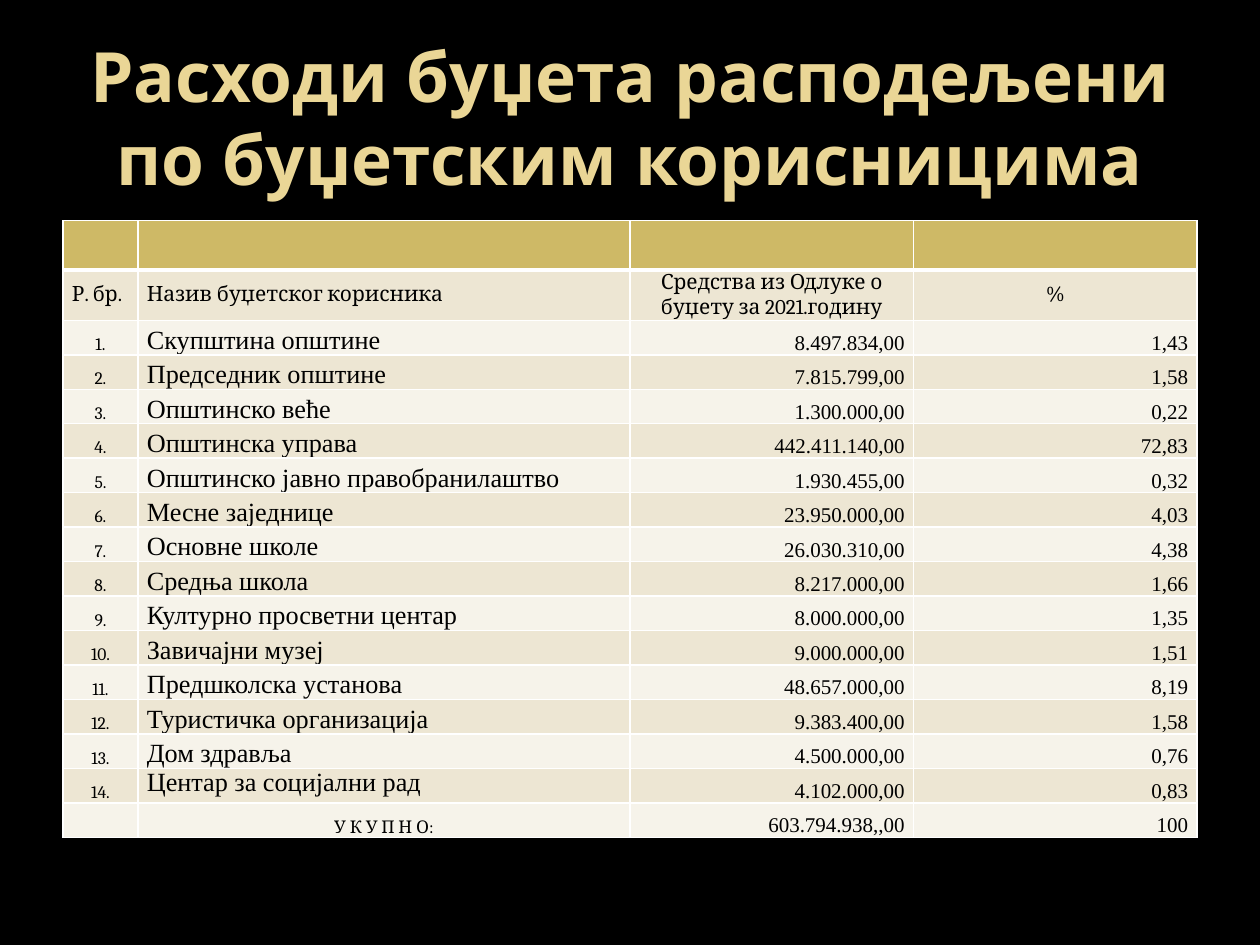
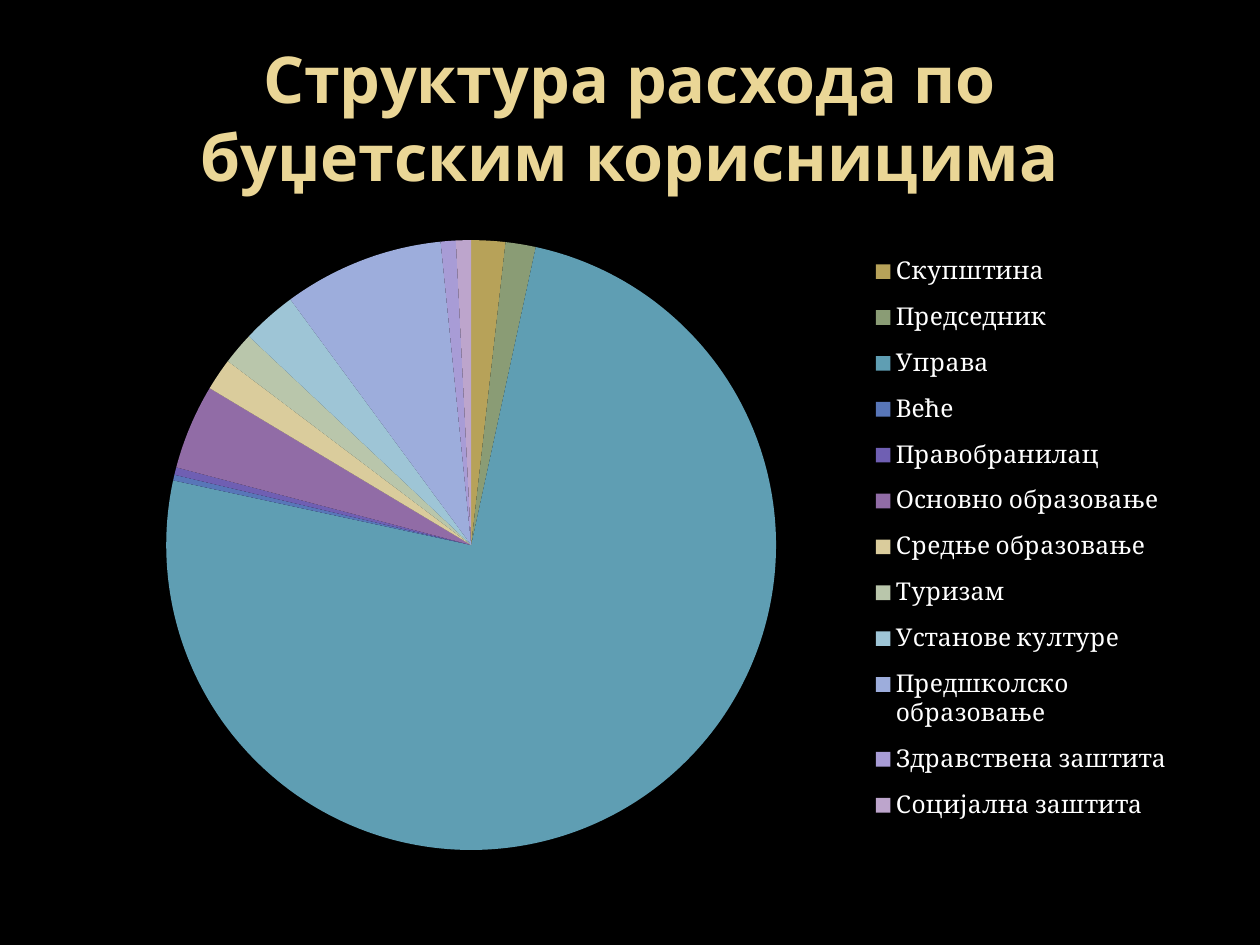
from dataclasses import dataclass

from lxml import etree
from pptx import Presentation
from pptx.chart.data import CategoryChartData
from pptx.dml.color import RGBColor
from pptx.enum.chart import XL_CHART_TYPE, XL_LEGEND_POSITION
from pptx.enum.text import MSO_ANCHOR, PP_ALIGN
from pptx.oxml import parse_xml
from pptx.oxml.ns import nsdecls, qn
from pptx.util import Cm, Pt

LEFT, CENTER, RIGHT, JUSTIFY = PP_ALIGN.LEFT, PP_ALIGN.CENTER, PP_ALIGN.RIGHT, PP_ALIGN.JUSTIFY
TOP, MIDDLE, BOTTOM = MSO_ANCHOR.TOP, MSO_ANCHOR.MIDDLE, MSO_ANCHOR.BOTTOM
PIE, LEGEND_RIGHT = XL_CHART_TYPE.PIE, XL_LEGEND_POSITION.RIGHT


@dataclass(frozen=True)
class Theme:
    background: str = "000000"
    title: str = "EAD696"
    header: str = "CEB966"
    bands: tuple[str, str] = ("EDE6D3", "F6F3EA")
    border: str = "FFFFFF"
    table_text: str = "000000"
    chart_text: str = "FFFFFF"
    title_font: str = "Open Sans"
    label_font: str = "Cambria"
    body_font: str = "Times New Roman"
    number_size: float = 10
    text_size: float = 12
    legend_size: float = 14
    name_size: float = 15
    chart_size: float = 18


@dataclass(frozen=True)
class CellStyle:
    font: str
    size: float
    align: PP_ALIGN
    anchor: MSO_ANCHOR = BOTTOM


@dataclass(frozen=True)
class Beneficiary:
    name: str
    amount: str
    share: str


@dataclass(frozen=True)
class Sector:
    name: str
    share: float
    color: str


THEME = Theme()
CONTENT_LEFT, CONTENT_TOP, CONTENT_WIDTH = Cm(1.27), Cm(4.45), Cm(22.86)
COLUMN_WIDTHS = (Cm(1.51), Cm(9.92), Cm(5.72), Cm(5.71))
TABLE_HEIGHT, HEADER_HEIGHT, HEADER_ROWS = Cm(12.41), Cm(0.99), 2

HEADING_LEFT = CellStyle(THEME.label_font, THEME.text_size, LEFT, MIDDLE)
HEADING_CENTER = CellStyle(THEME.label_font, THEME.text_size, CENTER, MIDDLE)
NUMBER = CellStyle(THEME.label_font, THEME.number_size, CENTER)
NAME = CellStyle(THEME.body_font, THEME.name_size, LEFT)
LAST_NAME = CellStyle(THEME.body_font, THEME.name_size, JUSTIFY, TOP)
FIGURE = CellStyle(THEME.body_font, THEME.text_size, RIGHT)

HEADINGS = ("Р. бр.", "Назив буџетског корисника",
            "Средства из Одлуке о буџету за 2021.годину", "%")
BENEFICIARIES = (
    Beneficiary("Скупштина општине", "8.497.834,00", "1,43"),
    Beneficiary("Председник општине", "7.815.799,00", "1,58"),
    Beneficiary("Општинско веће", "1.300.000,00", "0,22"),
    Beneficiary("Општинска управа", "442.411.140,00", "72,83"),
    Beneficiary("Општинско јавно правобранилаштво", "1.930.455,00", "0,32"),
    Beneficiary("Месне заједнице", "23.950.000,00", "4,03"),
    Beneficiary("Основне школе", "26.030.310,00", "4,38"),
    Beneficiary("Средњa школa", "8.217.000,00", "1,66"),
    Beneficiary("Културно просветни центар", "8.000.000,00", "1,35"),
    Beneficiary("Завичајни музеј", "9.000.000,00", "1,51"),
    Beneficiary("Предшколска установа", "48.657.000,00", "8,19"),
    Beneficiary("Туристичка организација", "9.383.400,00", "1,58"),
    Beneficiary("Дом здравља", "4.500.000,00", "0,76"),
    Beneficiary("Центар за социјални рад", "4.102.000,00", "0,83"),
)
TOTAL = ("", "У К У П Н О:", "603.794.938,,00", "100")

SECTORS = (
    Sector("Скупштина", 1.8, "B7A259"),
    Sector("Председник", 1.6, "8A9C75"),
    Sector("Управа", 75, "5F9EB3"),
    Sector("Веће", 0.3, "5876B8"),
    Sector("Правобранилац", 0.4, "6F5FB3"),
    Sector("Основно образовање", 4.5, "916CA6"),
    Sector("Средње образовање", 1.7, "DACC9C"),
    Sector("Туризам", 1.7, "B9C6AB"),
    Sector("Установе културе", 2.9, "9EC5D6"),
    Sector("Предшколско образовање", 8.5, "9DADDC"),
    Sector("Здравствена заштита", 0.8, "A89CD6"),
    Sector("Социјална заштита", 0.8, "BDA5CC"),
)


def style_font(font, name: str, size: float, color: str, bold: bool = False) -> None:
    font.name, font.size, font.bold = name, Pt(size), bold
    font.color.rgb = RGBColor.from_string(color)


def add_page(deck, title: str, title_size: float):
    """Add a dark page with its centred title."""
    page = deck.slides.add_slide(deck.slide_layouts[6])
    page.background.fill.solid()
    page.background.fill.fore_color.rgb = RGBColor.from_string(THEME.background)
    box = page.shapes.add_textbox(CONTENT_LEFT, Cm(0.76), CONTENT_WIDTH, Cm(3.18))
    frame = box.text_frame
    frame.word_wrap, frame.vertical_anchor = True, MIDDLE
    para = frame.paragraphs[0]
    para.text, para.alignment = title, CENTER
    style_font(para.font, THEME.title_font, title_size, THEME.title, bold=True)
    return page


def add_borders(cell, bottom_width: float, top_width: float) -> None:
    properties = cell._tc.get_or_add_tcPr()
    for side, width in (("L", 1), ("R", 1), ("T", top_width), ("B", bottom_width)):
        properties.append(parse_xml(
            f'<a:ln{side} {nsdecls("a")} w="{Pt(width)}"><a:solidFill>'
            f'<a:srgbClr val="{THEME.border}"/></a:solidFill></a:ln{side}>'))


def fill_row(table, row: int, texts: tuple[str, ...], styles: tuple[CellStyle, ...]) -> None:
    color = THEME.bands[(row - 1) % 2] if row else THEME.header
    for column, (text, style) in enumerate(zip(texts, styles)):
        cell = table.cell(row, column)
        add_borders(cell, 3 if row == 0 else 1, 3 if row == 1 else 1)
        cell.fill.solid()
        cell.fill.fore_color.rgb = RGBColor.from_string(color)
        cell.margin_left = cell.margin_right = Cm(0.18)
        cell.margin_top = cell.margin_bottom = 0
        cell.vertical_anchor = style.anchor
        para = cell.text_frame.paragraphs[0]
        para.text, para.alignment = text, style.align
        style_font(para.font, style.font, style.size, THEME.table_text)


def add_expense_table(page) -> None:
    headings = (HEADING_LEFT, HEADING_LEFT, HEADING_CENTER, HEADING_CENTER)
    rows = [(("",) * 4, headings), (HEADINGS, headings)]
    for number, item in enumerate(BENEFICIARIES, 1):
        name_style = LAST_NAME if number == len(BENEFICIARIES) else NAME
        rows.append(((f"{number}.", item.name, item.amount, item.share),
                     (NUMBER, name_style, FIGURE, FIGURE)))
    rows.append((TOTAL, (NUMBER, NUMBER, FIGURE, FIGURE)))

    body_rows = len(rows) - HEADER_ROWS
    row_height = (TABLE_HEIGHT - HEADER_ROWS * HEADER_HEIGHT) // body_rows
    heights = [HEADER_HEIGHT] * HEADER_ROWS + [row_height] * body_rows
    table = page.shapes.add_table(len(rows), len(COLUMN_WIDTHS), CONTENT_LEFT, CONTENT_TOP,
                                  CONTENT_WIDTH, TABLE_HEIGHT).table
    table.first_row = table.horz_banding = False
    for column, width in zip(table.columns, COLUMN_WIDTHS):
        column.width = width
    for index, (height, (texts, styles)) in enumerate(zip(heights, rows)):
        table.rows[index].height = height
        fill_row(table, index, texts, styles)


def place_part(part, position: int, **settings: float | str) -> None:
    """Fix a chart part, its place and size as fractions of the chart's size."""
    for automatic in part.findall(qn("c:layout")):
        part.remove(automatic)
    layout = etree.Element(qn("c:layout"))
    manual = etree.SubElement(layout, qn("c:manualLayout"))
    for tag, value in settings.items():
        etree.SubElement(manual, qn(f"c:{tag}")).set("val", str(value))
    part.insert(position, layout)


def add_sector_pie(page) -> None:
    data = CategoryChartData()
    data.categories = [sector.name for sector in SECTORS]
    data.add_series("Series 1", [sector.share for sector in SECTORS])
    chart = page.shapes.add_chart(PIE, CONTENT_LEFT, CONTENT_TOP,
                                  CONTENT_WIDTH, Cm(13.08), data).chart
    chart.has_title = False
    style_font(chart.font, THEME.label_font, THEME.chart_size, THEME.chart_text)
    chart.has_legend = True
    legend = chart.legend
    legend.position, legend.include_in_layout = LEGEND_RIGHT, False
    style_font(legend.font, THEME.label_font, THEME.legend_size, THEME.chart_text)
    plot = chart.plots[0]
    plot.vary_by_categories = True
    for index, sector in enumerate(SECTORS):
        slice_format = plot.series[0].points[index].format
        slice_format.fill.solid()
        slice_format.fill.fore_color.rgb = RGBColor.from_string(sector.color)
        slice_format.line.fill.background()
    place_part(chart._chartSpace.chart.plotArea, 0, layoutTarget="inner",
               xMode="edge", yMode="edge", x=0.09, y=0.03, w=0.54, h=0.94)
    place_part(legend._element, 1, xMode="edge", yMode="edge", x=0.71, y=0.03, w=0.27, h=0.92)


def main() -> None:
    deck = Presentation()
    deck.slide_width, deck.slide_height = Cm(25.4), Cm(19.05)
    add_expense_table(add_page(deck, "Расходи буџета расподељени по буџетским корисницима", 39.6))
    add_sector_pie(add_page(deck, "Структура расхода по буџетским корисницима", 36.9))
    deck.save("out.pptx")


if __name__ == "__main__":
    main()
